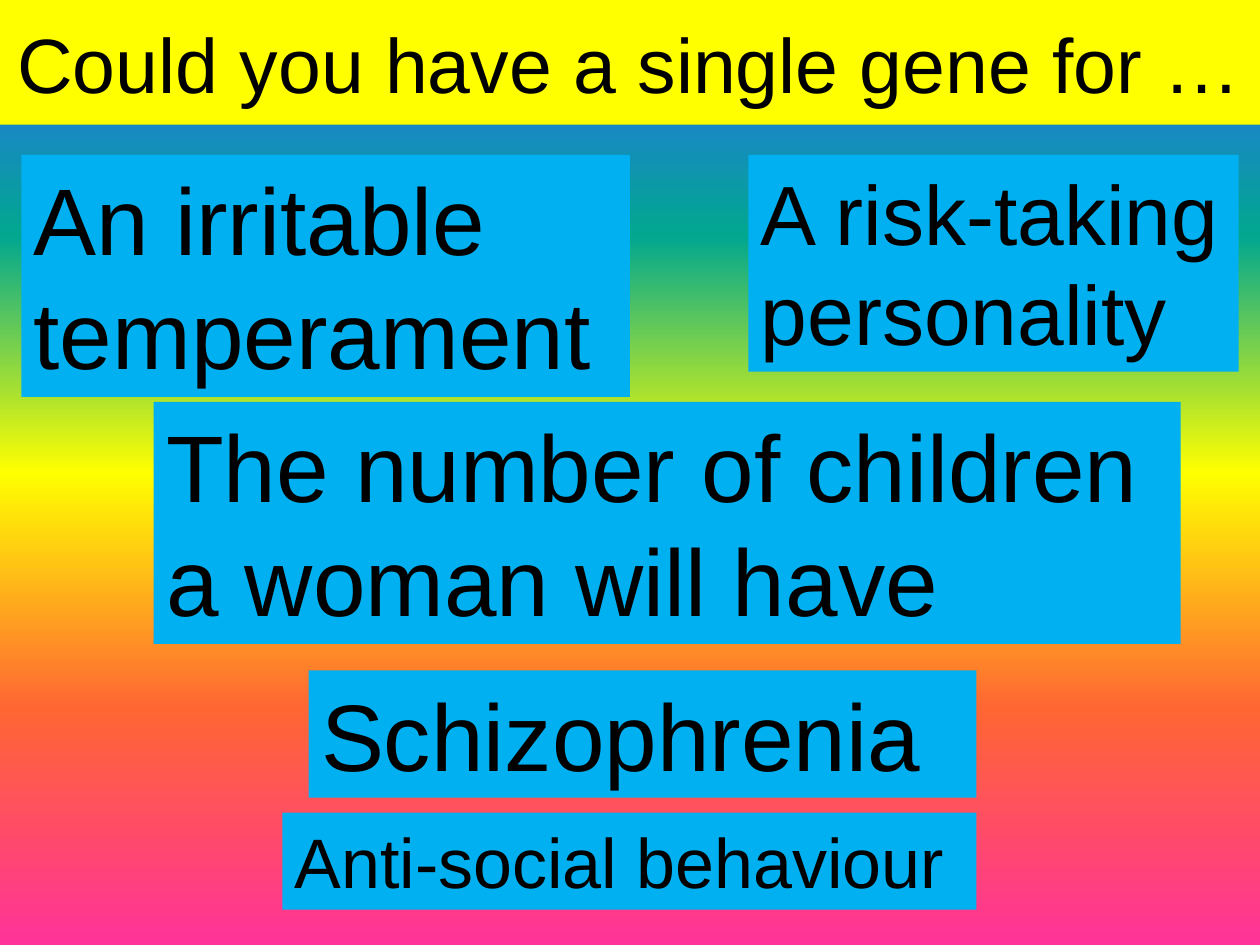
import copy

import pptx
import pptx.dml.color
import pptx.enum.text
import pptx.oxml.ns
import pptx.util

WIDTH, HEIGHT = 10, 7.5
COLORS = {"title": "FFFF00", "card": "00B0F0", "text": "000000"}
RAINBOW = ["FF3399", "FF6633", "FFFF00", "01A78F", "3366FF"]  # bottom to top


def rgb(value):
    return pptx.dml.color.RGBColor.from_string(value)


class GeneSlide:
    """Holds the slide and its style; positions are shares of the slide's size."""

    font = "Arial"

    def __init__(self, presentation):
        self.width = presentation.slide_width
        self.height = presentation.slide_height
        self.slide = presentation.slides.add_slide(presentation.slide_layouts[6])

    def background(self, colors):
        fill = self.slide.background.fill
        fill.gradient()
        fill.gradient_angle = 90
        stop_list = self.slide.element.find(".//" + pptx.oxml.ns.qn("a:gsLst"))
        while len(stop_list) < len(colors):
            stop_list.append(copy.deepcopy(stop_list[0]))
        for index, (stop, color) in enumerate(zip(fill.gradient_stops, colors)):
            stop.position = index / (len(colors) - 1)
            stop.color.rgb = rgb(color)

    def panel(self, text, left, top, width, height, size, color):
        box = self.slide.shapes.add_textbox(
            int(left * self.width), int(top * self.height),
            int(width * self.width), int(height * self.height))
        box.fill.solid()
        box.fill.fore_color.rgb = rgb(COLORS[color])
        frame = box.text_frame
        frame.word_wrap = True
        frame.text = text
        font = frame.paragraphs[0].runs[0].font
        font.name = self.font
        font.size = pptx.util.Pt(size)
        font.color.rgb = rgb(COLORS["text"])
        return frame

    def title(self, text, height):
        frame = self.panel(text, 0, 0, 1, height, 44, "title")
        frame.vertical_anchor = pptx.enum.text.MSO_ANCHOR.MIDDLE
        frame.paragraphs[0].alignment = pptx.enum.text.PP_ALIGN.CENTER

    def card(self, text, left, top, width, height, size=54):
        frame = self.panel(text, left, top, width, height, size, "card")
        frame.auto_size = pptx.enum.text.MSO_AUTO_SIZE.SHAPE_TO_FIT_TEXT


def main():
    presentation = pptx.Presentation()
    presentation.slide_width = pptx.util.Inches(WIDTH)
    presentation.slide_height = pptx.util.Inches(HEIGHT)
    page = GeneSlide(presentation)
    page.background(RAINBOW)

    # Question
    page.title("Could you have a single gene for …", 0.99 / HEIGHT)

    # Candidate traits: left, top, width, height in inches, then text size
    traits = [
        ("The number of children a woman will have", 1.22, 3.19, 8.15, 1.92, 54),
        ("A risk-taking personality", 5.94, 1.23, 3.89, 1.72, 48),
        ("An irritable temperament", 0.17, 1.23, 4.83, 1.92, 54),
        ("Anti-social behaviour", 2.24, 6.45, 5.51, 0.77, 40),
        ("Schizophrenia", 2.45, 5.32, 5.3, 1.01, 54),
    ]
    for trait, left, top, width, height, size in traits:
        page.card(trait, left / WIDTH, top / HEIGHT,
                  width / WIDTH, height / HEIGHT, size)

    presentation.save("out.pptx")


if __name__ == "__main__":
    main()
